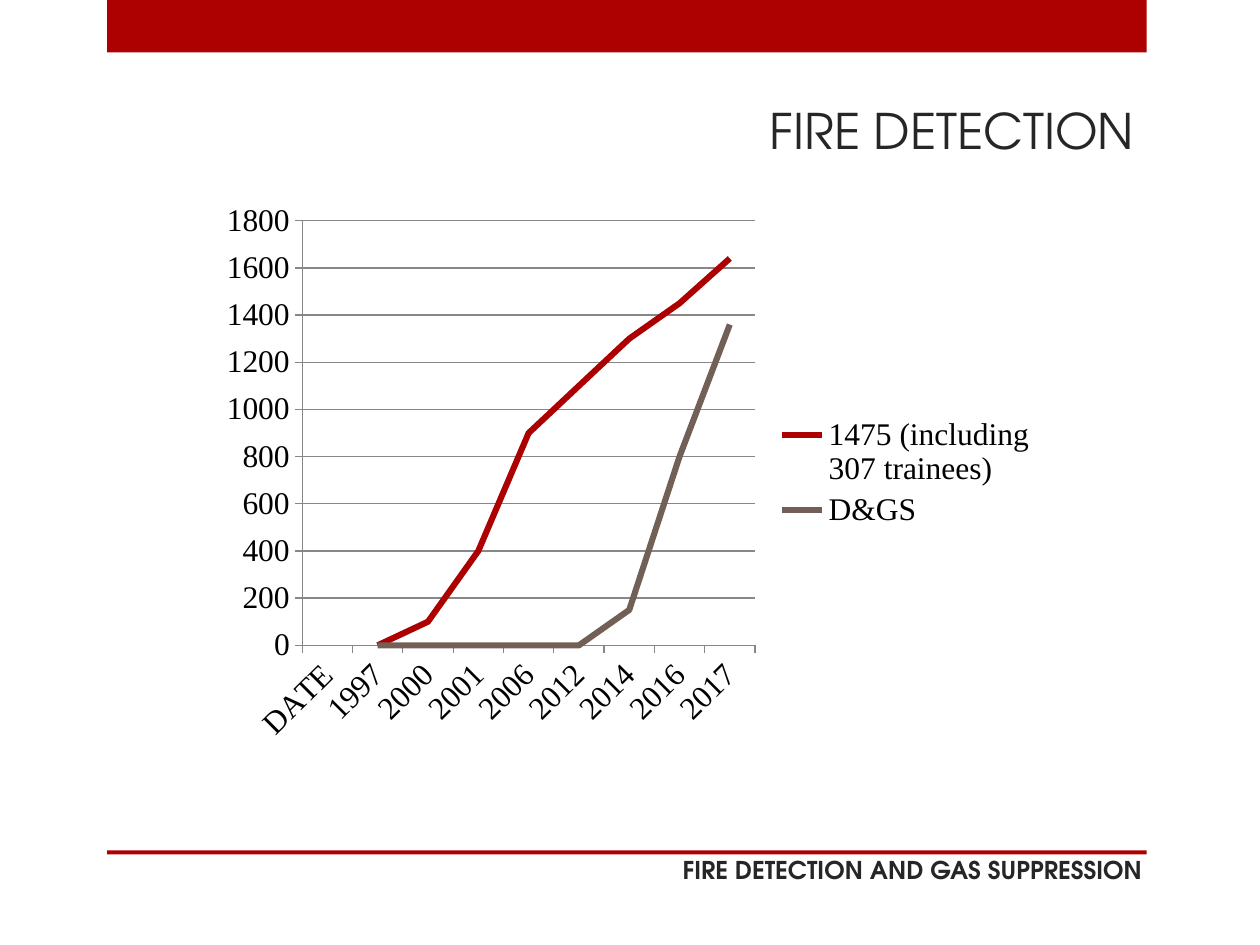
from dataclasses import dataclass

from pptx import Presentation
from pptx.chart.data import CategoryChartData
from pptx.dml.color import RGBColor
from pptx.enum.chart import XL_CHART_TYPE, XL_LEGEND_POSITION, XL_TICK_MARK
from pptx.enum.shapes import MSO_SHAPE
from pptx.enum.text import MSO_ANCHOR, PP_ALIGN
from pptx.util import Pt

LINE = XL_CHART_TYPE.LINE
LEGEND_RIGHT = XL_LEGEND_POSITION.RIGHT
TICK_OUT = XL_TICK_MARK.OUTSIDE
RECT = MSO_SHAPE.RECTANGLE
TOP = MSO_ANCHOR.TOP
RIGHT = PP_ALIGN.RIGHT
TITLE_ONLY = 5


@dataclass(frozen=True)
class Theme:
    red: RGBColor = RGBColor(0xAD, 0x01, 0x01)
    brown: RGBColor = RGBColor(0x72, 0x60, 0x56)
    ink: RGBColor = RGBColor(0x26, 0x26, 0x26)
    black: RGBColor = RGBColor(0, 0, 0)
    grid: RGBColor = RGBColor(0x87, 0x87, 0x87)
    font: str = "TeX Gyre Adventor"
    chart_font: str = "Times New Roman"
    title_size: int = 28
    footer_size: int = 14
    chart_size: int = 18


THEME = Theme()

YEARS = ["DATE", "1997", "2000", "2001", "2006", "2012", "2014", "2016", "2017"]
SERIES = [
    ("1475 (including 307 trainees)",
     [None, 0, 100, 400, 900, 1100, 1300, 1450, 1640], THEME.red),
    ("D&GS", [None, 0, 0, 0, 0, 0, 150, 800, 1360], THEME.brown),
]


def style_font(font, name, size, color, bold=False):
    font.name = name
    font.size = Pt(size)
    font.color.rgb = color
    font.bold = bold


def add_bar(slide, left, top, width, height):
    sp = slide.shapes.add_shape(RECT, Pt(left), Pt(top), Pt(width), Pt(height))
    sp.shadow.inherit = False
    sp.fill.solid()
    sp.fill.fore_color.rgb = THEME.red
    sp.line.fill.background()


def set_text(sp, text, size, bold=False):
    tf = sp.text_frame
    tf.word_wrap = True
    tf.vertical_anchor = TOP
    p = tf.paragraphs[0]
    p.text = text
    p.alignment = RIGHT
    style_font(p.font, THEME.font, size, THEME.ink, bold)


def set_title(slide, text, left, top, width, height):
    sp = slide.shapes.title
    sp.left, sp.top, sp.width, sp.height = Pt(left), Pt(top), Pt(width), Pt(height)
    set_text(sp, text, THEME.title_size)


def add_footer(slide, text, left, top, width, height):
    sp = slide.shapes.add_textbox(Pt(left), Pt(top), Pt(width), Pt(height))
    set_text(sp, text, THEME.footer_size, bold=True)


def style_line(line, color, width):
    line.color.rgb = color
    line.width = Pt(width)


def add_line_chart(slide, left, top, width, height):
    data = CategoryChartData(number_format="General")
    data.categories = YEARS
    for name, values, _ in SERIES:
        data.add_series(name, values)
    chart = slide.shapes.add_chart(
        LINE, Pt(left), Pt(top), Pt(width), Pt(height), data).chart
    style_font(chart.font, THEME.chart_font, THEME.chart_size, THEME.black)
    chart.has_title = False
    chart.has_legend = True
    chart.legend.position = LEGEND_RIGHT
    chart.legend.include_in_layout = False

    # Axes and gridlines
    for axis in (chart.category_axis, chart.value_axis):
        axis.major_tick_mark = TICK_OUT
        style_line(axis.format.line, THEME.grid, 0.75)
    axis = chart.value_axis
    axis.minimum_scale, axis.maximum_scale, axis.major_unit = 0, 1800, 200
    axis.has_major_gridlines = True
    style_line(axis.major_gridlines.format.line, THEME.grid, 0.75)

    # Series lines
    chart.plots[0].vary_by_categories = False
    for series, (_, _, color) in zip(chart.plots[0].series, SERIES):
        series.smooth = False
        style_line(series.format.line, color, 3.5)


def main():
    prs = Presentation()
    prs.slide_width, prs.slide_height = Pt(720), Pt(540)
    slide = prs.slides.add_slide(prs.slide_layouts[TITLE_ONLY])

    # Top band and footer rule
    add_bar(slide, 61.2, 0, 594, 30)
    add_bar(slide, 61.2, 486, 594, 2.2)

    # Footer and title
    add_footer(slide, "FIRE DETECTION AND GAS SUPPRESSION", 48, 485.3, 612, 28.8)
    set_title(slide, "FIRE DETECTION", 60, 54, 595.2, 64.8)

    # Trend by year
    add_line_chart(slide, 120, 110, 480, 320)

    prs.save("out.pptx")


if __name__ == "__main__":
    main()
